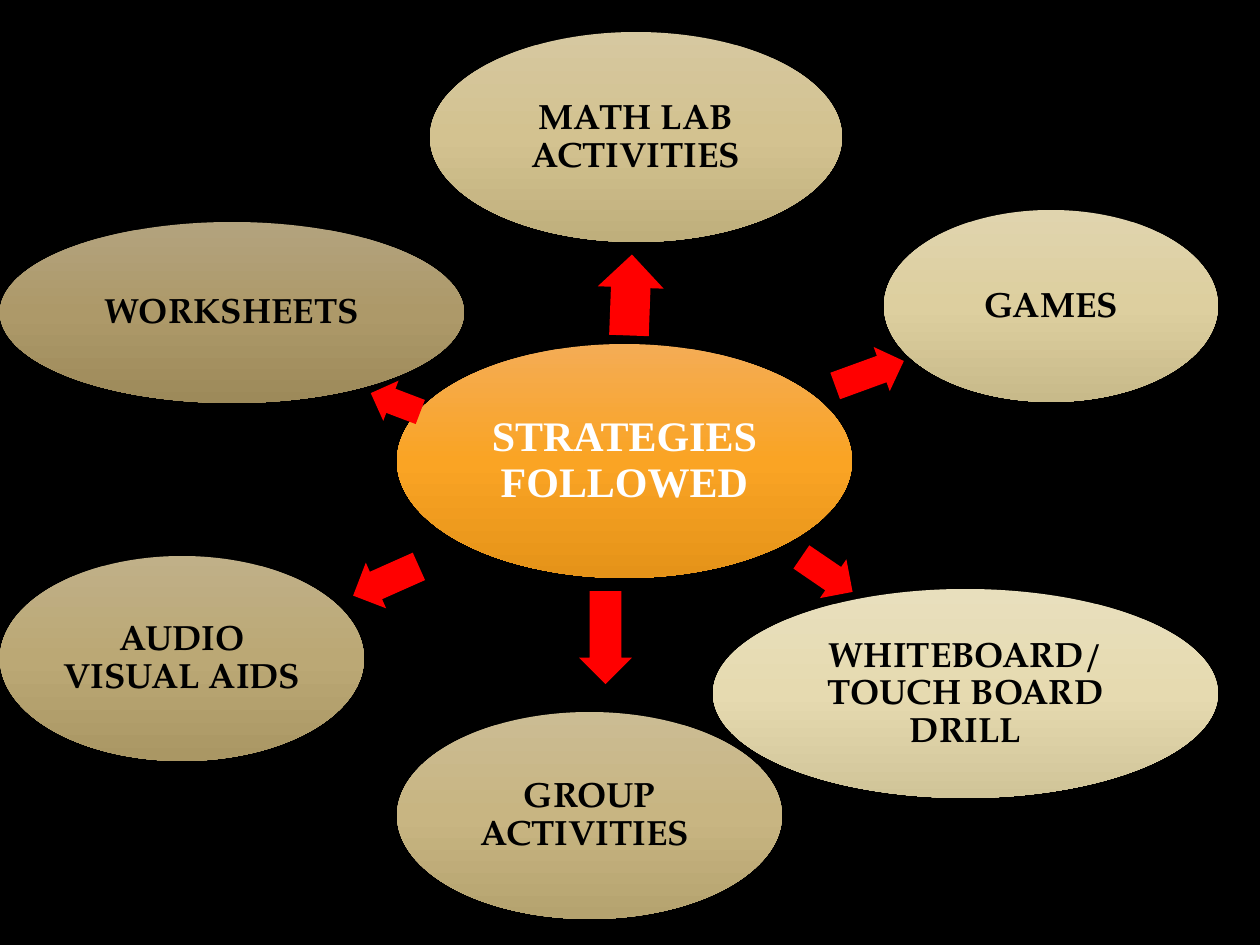
from copy import deepcopy
from dataclasses import dataclass

from pptx import Presentation
from pptx.dml.color import RGBColor
from pptx.enum.shapes import MSO_SHAPE as Shape
from pptx.enum.text import MSO_ANCHOR as Anchor, PP_ALIGN as Align
from pptx.util import Emu, Pt

EMU_PER_PX = 914400 / 126


@dataclass(frozen=True)
class Theme:
    background: str = "000000"
    arrow: str = "FF0000"
    hub_text: str = "FFFFFF"
    strategy_text: str = "000000"
    hub_gradient: tuple = ("F4AC55", "FAA424", "E59319")
    hub_font: str = "Times New Roman"
    strategy_font: str = "TeX Gyre Pagella"
    hub_size: int = 24
    strategy_size: int = 20


THEME = Theme()

HUB_BOX = (397, 344, 455, 234)

# label, oval box, gradient from top to bottom, arrow box, arrow rotation
STRATEGIES = [
    ("WHITEBOARD/ TOUCH BOARD DRILL", (713, 589, 505, 209),
     ("E8DFBD", "E6DAB0", "D0C498"), (796, 551, 62, 47), 34.3),
    ("GAMES", (884, 210, 334, 192),
     ("E0D4AE", "DDCF9F", "C8BA8A"), (833, 350, 73, 47), 340),
    ("MATH LAB ACTIVITIES", (430, 32, 412, 210),
     ("D6C8A0", "D3C290", "BFAF7C"), (590, 262, 81, 66), 272.1),
    ("GROUP ACTIVITIES ", (397, 712, 385, 207),
     ("CBBC93", "C8B582", "B5A36F"), (559, 611, 93, 53), 90),
    ("AUDIO VISUAL AIDS", (0, 556, 364, 205),
     ("C0B088", "BBA875", "AA9764"), (350, 556, 72, 50), 156),
    ("WORKSHEETS", (0, 222, 464, 181),
     ("B3A37E", "AD9969", "9D8A5A"), (369, 381, 53, 43), 200.8),
]


def px(length):
    return Emu(round(length * EMU_PER_PX))


def rgb(color):
    return RGBColor.from_string(color)


def add_plain_shape(slide, kind, box):
    shape = slide.shapes.add_shape(kind, *map(px, box))
    shape.shadow.inherit = False
    shape.line.fill.background()
    return shape


def fill_gradient(fill, colors):
    """Spread three colours evenly from top to bottom."""
    fill.gradient()
    fill.gradient_angle = 270
    # A new gradient has two stops; add the middle one
    stop_list = fill._xPr.gradFill.gsLst
    stop_list.insert(1, deepcopy(stop_list[0]))
    for index, (stop, color) in enumerate(zip(fill.gradient_stops, colors)):
        stop.position = index / 2
        stop.color.rgb = rgb(color)


def write_text(shape, text, *, font, size, color, inset=3):
    frame = shape.text_frame
    frame.word_wrap = True
    frame.vertical_anchor = Anchor.MIDDLE
    frame.margin_left = frame.margin_right = px(inset)
    frame.margin_top = frame.margin_bottom = px(inset)
    paragraph = frame.paragraphs[0]
    paragraph.alignment = Align.CENTER
    paragraph.line_spacing = 0.9
    run = paragraph.add_run()
    run.text = text
    run.font.name = font
    run.font.size = Pt(size)
    run.font.bold = True
    run.font.color.rgb = rgb(color)


def add_oval(slide, box, colors, text, **text_format):
    oval = add_plain_shape(slide, Shape.OVAL, box)
    fill_gradient(oval.fill, colors)
    write_text(oval, text, **text_format)


def add_arrow(slide, box, rotation):
    arrow = add_plain_shape(slide, Shape.RIGHT_ARROW, box)
    arrow.adjustments[0] = 0.6
    arrow.adjustments[1] = 0.5
    arrow.rotation = rotation
    arrow.fill.solid()
    arrow.fill.fore_color.rgb = rgb(THEME.arrow)


def main():
    deck = Presentation()
    deck.slide_width, deck.slide_height = px(1260), px(945)
    slide = deck.slides.add_slide(deck.slide_layouts[6])
    slide.background.fill.solid()
    slide.background.fill.fore_color.rgb = rgb(THEME.background)

    # Hub
    add_oval(slide, HUB_BOX, THEME.hub_gradient, "STRATEGIES FOLLOWED",
             font=THEME.hub_font, size=THEME.hub_size, color=THEME.hub_text)

    # Strategies, each with the arrow that leads to it
    for label, oval_box, colors, arrow_box, rotation in STRATEGIES:
        add_arrow(slide, arrow_box, rotation)
        add_oval(slide, oval_box, colors, label, font=THEME.strategy_font,
                 size=THEME.strategy_size, color=THEME.strategy_text, inset=0)

    deck.save("out.pptx")


if __name__ == "__main__":
    main()
